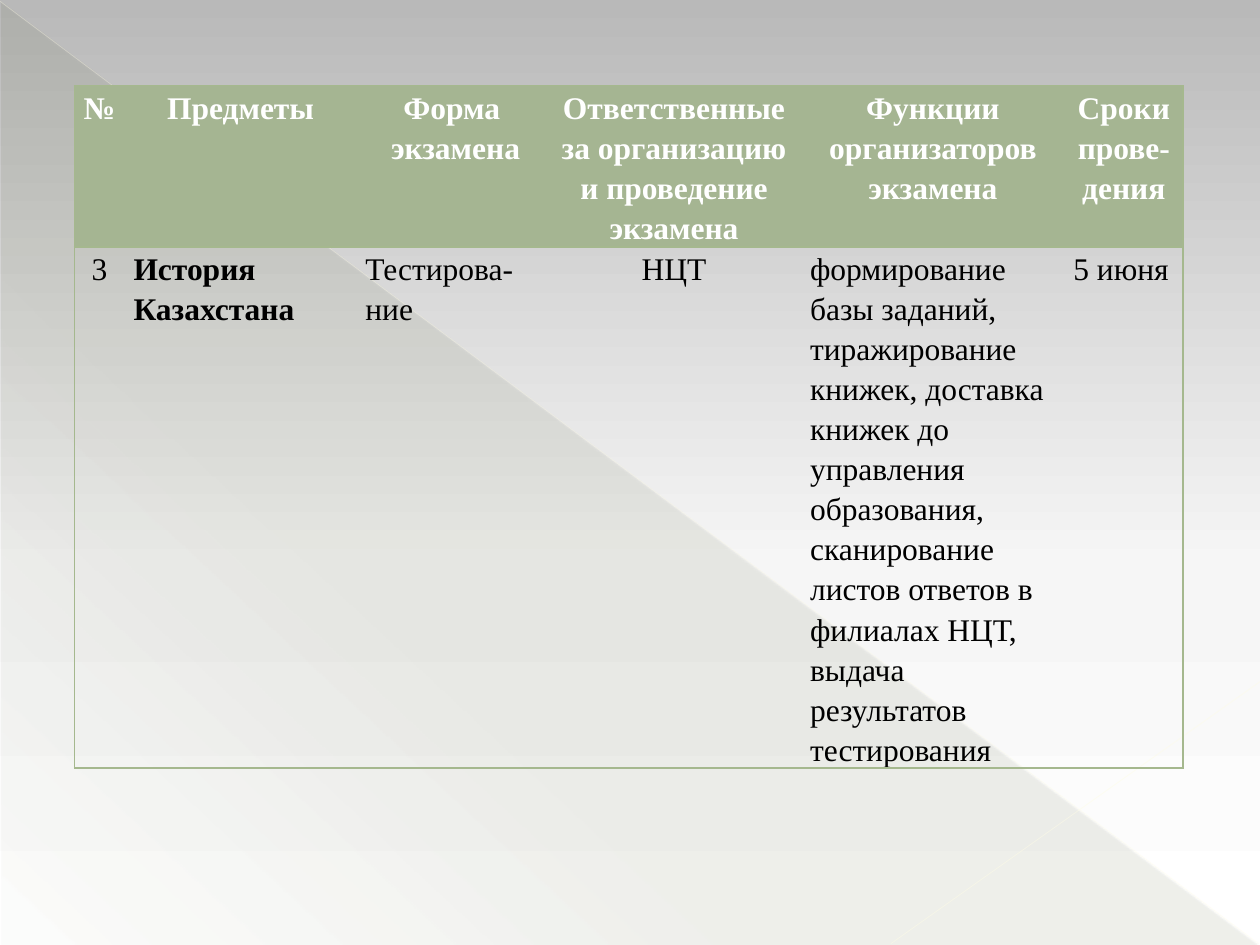
from dataclasses import dataclass

from lxml.etree import SubElement
from pptx import Presentation
from pptx.dml.color import RGBColor
from pptx.enum.shapes import MSO_CONNECTOR as Conn, MSO_SHAPE as Shape
from pptx.enum.text import PP_ALIGN as Align
from pptx.oxml.ns import qn
from pptx.util import Inches, Pt

GREEN = RGBColor(0xA5, 0xB5, 0x92)
BORDER = RGBColor(0xA5, 0xB8, 0x8E)
OLIVE = RGBColor(0x44, 0x4D, 0x26)
CREAM = RGBColor(0xFF, 0xFD, 0xE3)
IVORY = RGBColor(0xFF, 0xFD, 0xE6)
GRAY = RGBColor(0xB9, 0xB9, 0xB9)
PALE = RGBColor(0xF6, 0xF6, 0xF6)
WHITE = RGBColor(0xFF, 0xFF, 0xFF)
BLACK = RGBColor(0x00, 0x00, 0x00)
FONT = "Times New Roman"
NO_GRID = "{2D5ABB26-0587-4C30-8999-92F81FD0307C}"


@dataclass
class Stop:
    pos: int
    color: RGBColor
    opacity: int = 100


@dataclass
class Ray:
    start: tuple[float, float]
    end: tuple[float, float]
    color: RGBColor
    width: float
    opacity: int


@dataclass
class CellText:
    lines: list[str]
    centered: bool = True
    bold: bool = False


BACKDROP = [Stop(0, GRAY), Stop(60, PALE), Stop(100, WHITE)]
SHADE = [Stop(0, OLIVE, 10), Stop(70, OLIVE, 8), Stop(100, OLIVE, 1)]
RAYS = [
    Ray((0, 0.01), (9.99, 7.49), CREAM, 0.39, 35),
    Ray((10, 5.41), (7.07, 7.49), IVORY, 0.47, 45),
]
COLUMNS = [0.4, 1.84, 1.51, 2.02, 2.09, 0.94]
ROWS = [1.28, 4.13]
HEADER = [
    CellText(["№"], bold=True),
    CellText(["Предметы"], bold=True),
    CellText(["Форма", " экзамена"], bold=True),
    CellText(["Ответственные за организацию и проведение экзамена"], bold=True),
    CellText(["Функции организаторов экзамена"], bold=True),
    CellText(["Сроки прове-дения"], bold=True),
]
EXAM = [
    CellText(["3"]),
    CellText(["История Казахстана"], centered=False, bold=True),
    CellText(["Тестирова-ние"], centered=False),
    CellText(["НЦТ"]),
    CellText(["формирование базы заданий, тиражирование книжек, доставка книжек "
              "до управления образования, сканирование листов ответов в филиалах "
              "НЦТ, выдача результатов тестирования"], centered=False),
    CellText(["5 июня"], centered=False),
]


def add_color(parent, color: RGBColor, opacity: int = 100) -> None:
    clr = SubElement(parent, qn("a:srgbClr"), val=str(color))
    if opacity < 100:
        SubElement(clr, qn("a:alpha"), val=str(opacity * 1000))


def set_gradient(fill, owner, stops: list[Stop], angle: int) -> None:
    fill.gradient()
    grad = owner.xpath(".//a:gradFill")[0]
    for child in list(grad):
        grad.remove(child)
    items = SubElement(grad, qn("a:gsLst"))
    for stop in stops:
        add_color(SubElement(items, qn("a:gs"), pos=str(stop.pos * 1000)),
                  stop.color, stop.opacity)
    SubElement(grad, qn("a:lin"), ang=str(angle * 60000), scaled="0")


def add_shade(s) -> None:
    sp = s.shapes.add_shape(Shape.RIGHT_TRIANGLE, Inches(0.01), Inches(0.02),
                            Inches(9.98), Inches(7.48))
    sp.shadow.inherit = False
    sp.line.fill.background()
    set_gradient(sp.fill, sp._element, SHADE, 133)


def add_ray(s, ray: Ray) -> None:
    points = [Inches(v) for v in ray.start + ray.end]
    line = s.shapes.add_connector(Conn.STRAIGHT, *points)
    line.line.width = Pt(ray.width)
    line.line.color.rgb = ray.color
    clr = line._element.xpath(".//a:ln//a:srgbClr")[0]
    SubElement(clr, qn("a:alpha"), val=str(ray.opacity * 1000))
    SubElement(line._element.spPr, qn("a:effectLst"))


def set_borders(cell, sides: list[str]) -> None:
    tc_pr = cell._tc.get_or_add_tcPr()
    for side in sides:
        ln = SubElement(tc_pr, qn(f"a:ln{side}"), w=str(Pt(0.75)))
        add_color(SubElement(ln, qn("a:solidFill")), BORDER)


def write_cell(cell, text: CellText, color: RGBColor) -> None:
    cell.margin_left = cell.margin_right = Inches(0.07)
    cell.margin_top = cell.margin_bottom = 0
    tf = cell.text_frame
    for i, line in enumerate(text.lines):
        p = tf.add_paragraph() if i else tf.paragraphs[0]
        p.alignment = Align.CENTER if text.centered else Align.LEFT
        p.line_spacing = 1.15
        r = p.add_run()
        r.text = line
        r.font.name = FONT
        r.font.size = Pt(18)
        r.font.bold = text.bold
        r.font.color.rgb = color


def add_exam_table(s) -> None:
    frame = s.shapes.add_table(len(ROWS), len(COLUMNS), Inches(0.59), Inches(0.68),
                               Inches(sum(COLUMNS)), Inches(sum(ROWS)))
    table = frame.table
    table._tbl.tblPr.find(qn("a:tableStyleId")).text = NO_GRID
    table.horz_banding = False
    for column, width in zip(table.columns, COLUMNS):
        column.width = Inches(width)
    for row, height in zip(table.rows, ROWS):
        row.height = Inches(height)
    last = len(COLUMNS) - 1
    for i, texts in enumerate([HEADER, EXAM]):
        for j, text in enumerate(texts):
            cell = table.cell(i, j)
            edges = {"L": j == 0, "R": j == last, "T": True, "B": i == 1}
            set_borders(cell, [side for side, drawn in edges.items() if drawn])
            write_cell(cell, text, BLACK if i else WHITE)
            if i:
                cell.fill.background()
            else:
                cell.fill.solid()
                cell.fill.fore_color.rgb = GREEN


def main() -> None:
    prs = Presentation()
    prs.slide_width, prs.slide_height = Inches(10), Inches(7.5)
    s = prs.slides.add_slide(prs.slide_layouts[6])
    set_gradient(s.background.fill, s._element, BACKDROP, 90)
    add_shade(s)
    for ray in RAYS:
        add_ray(s, ray)
    add_exam_table(s)
    prs.save("out.pptx")


if __name__ == "__main__":
    main()
